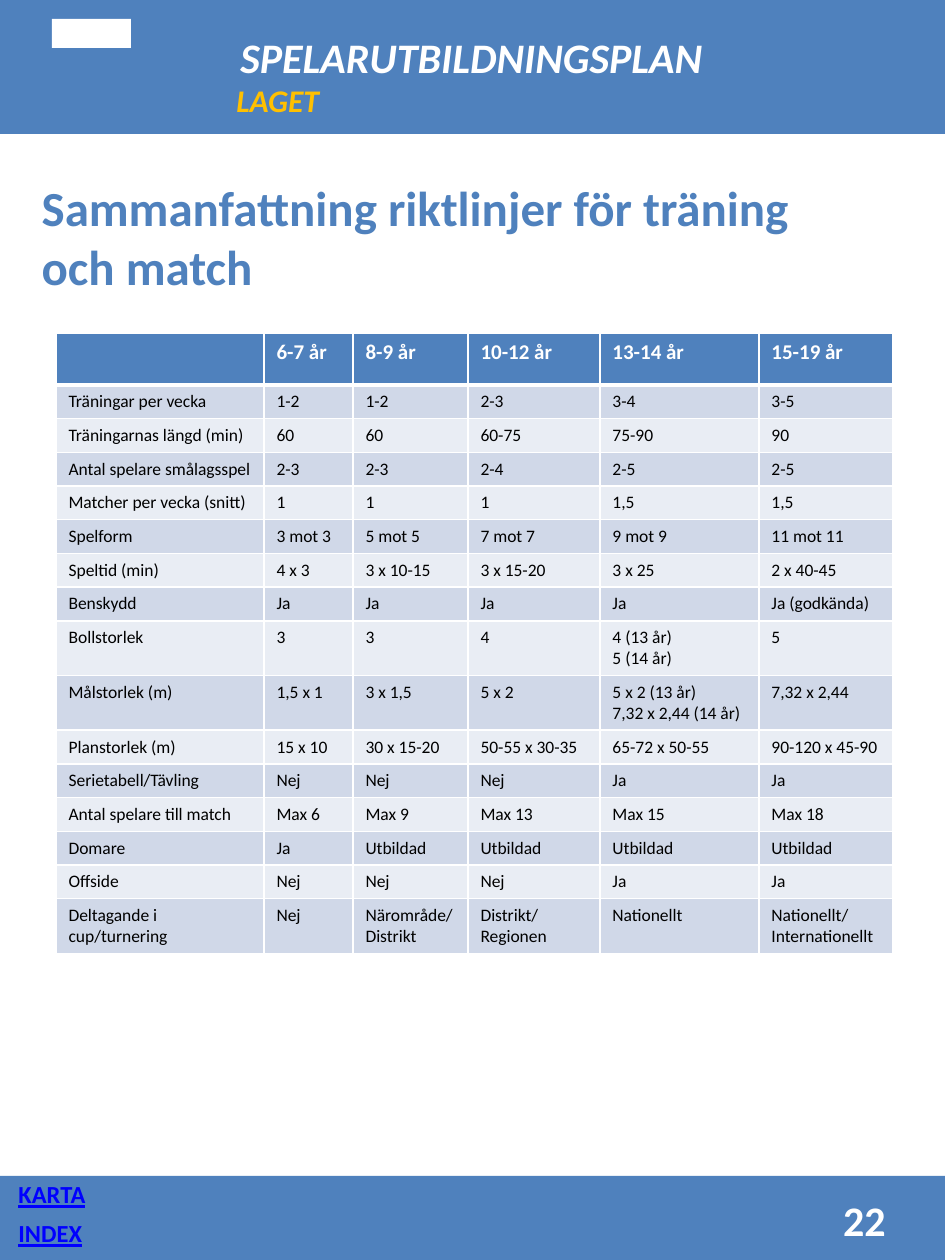
from lxml.etree import SubElement
from pptx import Presentation
from pptx.dml.color import RGBColor
from pptx.enum.shapes import MSO_SHAPE as Shape
from pptx.enum.text import MSO_ANCHOR as Anchor, PP_ALIGN as Align
from pptx.oxml.ns import qn
from pptx.util import Emu, Pt

PX = 914400 // 126
BLUE, WHITE, BLACK = "4F81BD", "FFFFFF", "000000"
GOLD, LINK_BLUE = "FFC000", "0000FF"
BANDS = ("D0D8E8", "E9EDF4")

COLUMN_WIDTHS = (208, 89, 115, 132, 159, 134)
HEADER_HEIGHT, LINE_HEIGHT, TWO_LINE_HEIGHT = 52, 33, 54
# "\n" starts a paragraph, "\v" breaks a line within one.
GUIDELINES = (
    ("", "6-7 år", "8-9 år", "10-12 år", "13-14 år", "15-19 år"),
    ("Träningar per vecka", "1-2", "1-2", "2-3", "3-4", "3-5"),
    ("Träningarnas längd (min)", "60", "60", "60-75", "75-90", "90"),
    ("Antal spelare smålagsspel", "2-3", "2-3", "2-4", "2-5", "2-5"),
    ("Matcher per vecka (snitt)", "1", "1", "1", "1,5", "1,5"),
    ("Spelform", "3 mot 3", "5 mot 5", "7 mot 7", "9 mot 9", "11 mot 11"),
    ("Speltid (min)", "4 x 3", "3 x 10-15", "3 x 15-20", "3 x 25", "2 x 40-45"),
    ("Benskydd", "Ja", "Ja", "Ja", "Ja", "Ja (godkända)"),
    ("Bollstorlek", "3", "3", "4", "4 (13 år)\n5 (14 år)", "5"),
    ("Målstorlek (m)", "1,5 x 1", "3 x 1,5", "5 x 2",
     "5 x 2 (13 år)\n7,32 x 2,44 (14 år)", "7,32 x 2,44"),
    ("Planstorlek (m)", "15 x 10", "30 x 15-20", "50-55 x 30-35",
     "65-72 x 50-55", "90-120 x 45-90"),
    ("Serietabell/Tävling", "Nej", "Nej", "Nej", "Ja", "Ja"),
    ("Antal spelare till match", "Max 6", "Max 9", "Max 13", "Max 15", "Max 18"),
    ("Domare", "Ja", "Utbildad", "Utbildad", "Utbildad", "Utbildad"),
    ("Offside", "Nej", "Nej", "Nej", "Ja", "Ja"),
    ("Deltagande i cup/turnering", "Nej", "Närområde/\vDistrikt",
     "Distrikt/\vRegionen", "Nationellt", "Nationellt/\vInternationellt"),
)


def px(*lengths):
    return [Emu(length * PX) for length in lengths]


def color(value):
    return RGBColor.from_string(value)


def paint(fill, value):
    fill.solid()
    fill.fore_color.rgb = color(value)


def border(cell, side, points):
    line = SubElement(cell._tc.get_or_add_tcPr(), qn(f"a:ln{side}"), w=str(Pt(points)))
    SubElement(SubElement(line, qn("a:solidFill")), qn("a:srgbClr"), val=WHITE)


class Page:
    font = "Calibri"

    def __init__(self, slide):
        self.slide = slide

    def add_text(self, frame, text, size, ink, bold=True, italic=False,
                 underline=False, align=Align.LEFT):
        for number, content in enumerate(text.split("\n")):
            paragraph = frame.add_paragraph() if number else frame.paragraphs[0]
            paragraph.alignment = align
            for part_number, part in enumerate(content.split("\v")):
                if part_number:
                    paragraph.add_line_break()
                if not part:
                    continue
                run = paragraph.add_run()
                run.text = part
                font = run.font
                font.name, font.size = self.font, Pt(size)
                font.bold, font.italic, font.underline = bold, italic, underline
                font.color.rgb = color(ink)

    def title(self, box, text, size, ink):
        heading = self.slide.shapes.title
        heading.left, heading.top, heading.width, heading.height = px(*box)
        heading.text_frame.word_wrap = False
        heading.text_frame.vertical_anchor = Anchor.TOP
        self.add_text(heading.text_frame, text, size, ink)

    def block(self, box, fill):
        shape = self.slide.shapes.add_shape(Shape.RECTANGLE, *px(*box))
        shape.shadow.inherit = False
        paint(shape.fill, fill)
        shape.line.fill.background()

    def label(self, box, text, size, ink, wrap=False, **style):
        frame = self.slide.shapes.add_textbox(*px(*box)).text_frame
        frame.word_wrap = wrap
        self.add_text(frame, text, size, ink, **style)

    def table(self, left, top, rows, widths):
        heights = [HEADER_HEIGHT] + [
            TWO_LINE_HEIGHT if any("\n" in text or "\v" in text for text in row)
            else LINE_HEIGHT for row in rows[1:]]
        table = self.slide.shapes.add_table(
            len(rows), len(widths),
            *px(left, top, sum(widths), sum(heights))).table
        for column, width in zip(table.columns, px(*widths)):
            column.width = width
        for row, height in zip(table.rows, px(*heights)):
            row.height = height
        for r, row in enumerate(rows):
            header = r == 0
            for c, text in enumerate(row):
                cell = table.cell(r, c)
                for side in "LRTB":
                    thick = (header and side == "B") or (r == 1 and side == "T")
                    border(cell, side, 3 if thick else 1)
                paint(cell.fill, BLUE if header else BANDS[(r - 1) % 2])
                self.add_text(cell.text_frame, text, 12 if header else 10,
                              WHITE if header else BLACK, bold=header)


def main():
    deck = Presentation()
    deck.slide_width, deck.slide_height = px(945, 1260)
    page = Page(deck.slides.add_slide(deck.slide_layouts[5]))

    page.block((0, 1176, 945, 84), BLUE)
    page.block((0, 0, 945, 134), BLUE)
    page.block((52, 19, 79, 29), WHITE)
    page.label((228, 25, 493, 63), "SPELARUTBILDNINGSPLAN", 24, WHITE, italic=True)
    page.label((224, 75, 566, 59), "LAGET", 18, GOLD, wrap=True, italic=True)
    page.title((29, 171, 794, 131),
               "Sammanfattning riktlinjer för träning\noch match", 28, BLUE)
    page.table(56, 333, GUIDELINES, COLUMN_WIDTHS)
    for top, name in ((1173, "KARTA"), (1212, "INDEX")):
        page.label((6, top, 92, 43), name, 14, LINK_BLUE, underline=True)
    page.label((810, 1188, 88, 67), "22", 24, WHITE, wrap=True, align=Align.RIGHT)

    deck.save("out.pptx")


if __name__ == "__main__":
    main()
